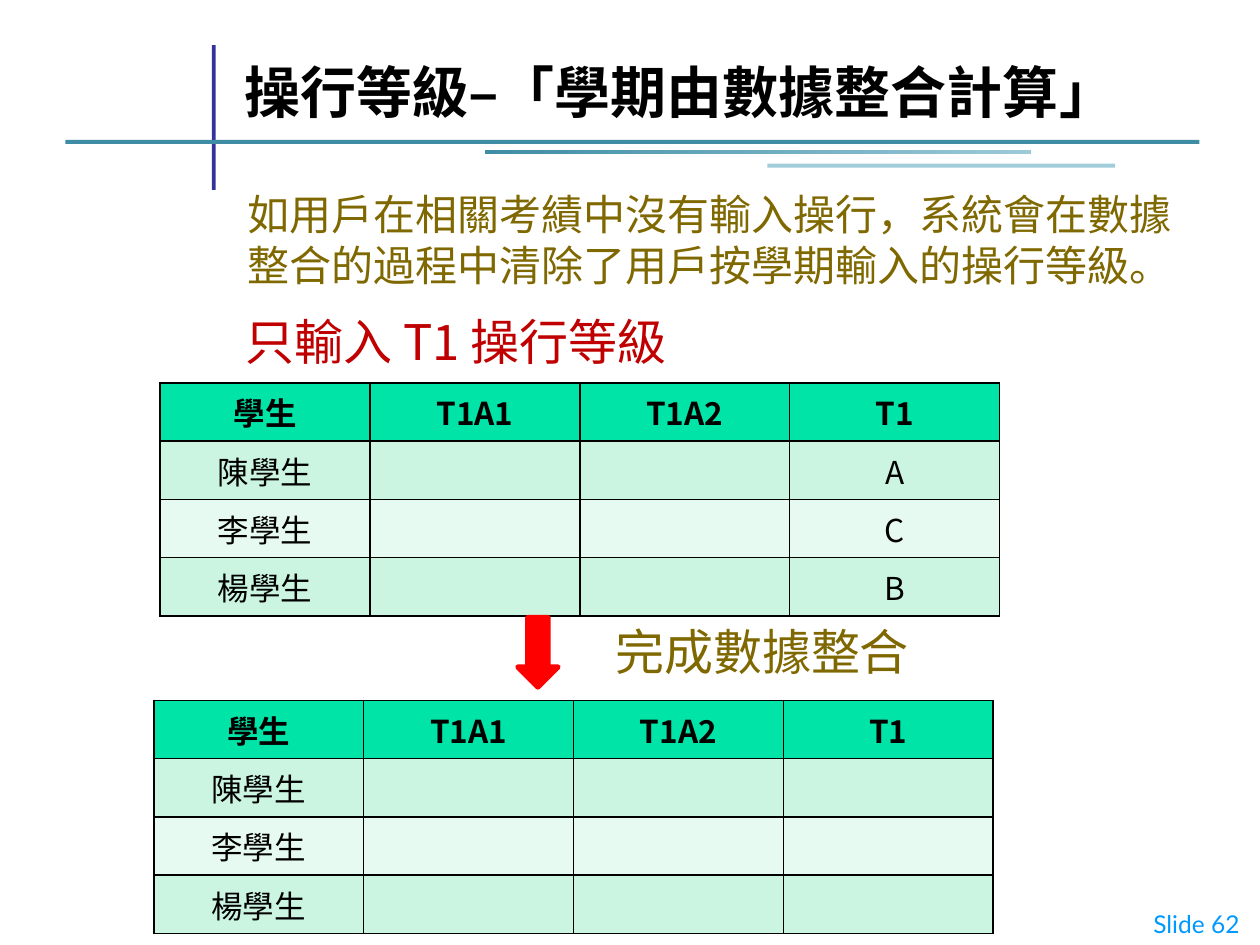
from dataclasses import dataclass

from lxml import etree
from pptx import Presentation
from pptx.dml.color import RGBColor
from pptx.enum.shapes import MSO_SHAPE
from pptx.enum.text import MSO_ANCHOR, MSO_AUTO_SIZE, PP_ALIGN
from pptx.oxml.ns import qn
from pptx.util import Cm, Pt

RECT, ARROW = MSO_SHAPE.RECTANGLE, MSO_SHAPE.DOWN_ARROW
TOP, MIDDLE, BOTTOM = MSO_ANCHOR.TOP, MSO_ANCHOR.MIDDLE, MSO_ANCHOR.BOTTOM
LEFT, CENTER, RIGHT = PP_ALIGN.LEFT, PP_ALIGN.CENTER, PP_ALIGN.RIGHT


@dataclass(frozen=True)
class Theme:
    font: str = "Noto Sans CJK SC"
    foot_font: str = "Lato"
    black: str = "000000"
    navy: str = "333399"
    teal: str = "3F8DA5"
    pale: str = "9BCAD9"
    light: str = "A1CDDB"
    olive: str = "806800"
    crimson: str = "C00000"
    red: str = "FF0000"
    blue: str = "0099FF"
    head: str = "00E4A8"
    bands: tuple[str, str] = ("CBF5E1", "E7FAF1")
    title: int = 32
    label: int = 28
    body: int = 24
    cell: int = 18
    foot: int = 14


THEME = Theme()


@dataclass(frozen=True)
class Box:
    """A frame in centimetres."""
    left: float
    top: float
    width: float
    height: float

    def frame(self) -> tuple:
        return Cm(self.left), Cm(self.top), Cm(self.width), Cm(self.height)


@dataclass(frozen=True)
class Bar:
    box: Box
    color: str
    fade: str = ""


@dataclass(frozen=True)
class Note:
    box: Box
    text: str
    size: int
    color: str
    anchor: MSO_ANCHOR = BOTTOM
    align: PP_ALIGN = CENTER
    font: str = THEME.font


@dataclass(frozen=True)
class Grid:
    left: float
    top: float
    grades: tuple[str, ...]


TITLE = Box(4.67, 1.14, 19.89, 1.5)
PUSH = Box(10.44, 12.45, 0.81, 1.4)
HEADS = ("學生", "T1A1", "T1A2", "T1")
NAMES = ("陳學生", "李學生", "楊學生")
COL, ROW = 4.23, 1.03

BARS = (
    Bar(Box(4.27, 0.91, 0.08, 2.92), THEME.navy),
    Bar(Box(1.32, 2.82, 22.86, 0.08), THEME.teal),
    Bar(Box(9.78, 3.02, 11, 0.08), THEME.teal, THEME.pale),
    Bar(Box(15.47, 3.3, 7.01, 0.08), THEME.light),
)
NOTES = (
    Note(Box(4.67, 3.68, 19.25, 2.31),
         "如用戶在相關考績中沒有輸入操行，系統會在數據整合的過程中清除了用戶按學期輸入的操行等級。",
         THEME.body, THEME.olive, TOP),
    Note(Box(4.09, 6.07, 10.21, 1.52), "只輸入 T1 操行等級", THEME.label, THEME.crimson),
    Note(Box(11.86, 12.32, 7.01, 1.52), "完成數據整合", THEME.label, THEME.olive),
    Note(Box(20.2, 18.21, 5.04, 0.84), "Slide 62", THEME.foot, THEME.blue,
         MIDDLE, RIGHT, THEME.foot_font),
)
GRIDS = (Grid(3.23, 7.72, ("A", "C", "B")), Grid(3.1, 14.12, ("", "", "")))


def rgb(color: str) -> RGBColor:
    return RGBColor.from_string(color)


def style(para, size: int, color: str, align=CENTER, bold=False, font=THEME.font) -> None:
    para.alignment = align
    para.font.size, para.font.bold, para.font.name = Pt(size), bold, font
    para.font.color.rgb = rgb(color)
    props = para._p.pPr.find(qn("a:defRPr"))
    etree.SubElement(props, qn("a:ea"), typeface=font)


def draw_bar(slide, bar: Bar) -> None:
    shape = slide.shapes.add_shape(RECT, *bar.box.frame())
    shape.shadow.inherit = False
    shape.line.fill.background()
    if bar.fade:
        shape.fill.gradient()
        shape.fill.gradient_angle = 0
        for stop, color in zip(shape.fill.gradient_stops, (bar.color, bar.fade)):
            stop.color.rgb = rgb(color)
    else:
        shape.fill.solid()
        shape.fill.fore_color.rgb = rgb(bar.color)


def draw_title(slide, text: str) -> None:
    title = slide.shapes.title
    title.left, title.top, title.width, title.height = TITLE.frame()
    frame = title.text_frame
    frame.text = text
    frame.auto_size = MSO_AUTO_SIZE.NONE
    frame.vertical_anchor = BOTTOM
    style(frame.paragraphs[0], THEME.title, THEME.black, LEFT, True)


def draw_note(slide, note: Note) -> None:
    frame = slide.shapes.add_textbox(*note.box.frame()).text_frame
    frame.word_wrap = True
    frame.vertical_anchor = note.anchor
    frame.text = note.text
    style(frame.paragraphs[0], note.size, note.color, note.align, font=note.font)


def edge(cell) -> None:
    """Rule all four sides; borders must come before the fill."""
    props = cell._tc.get_or_add_tcPr()
    for spot, side in enumerate(("lnL", "lnR", "lnT", "lnB")):
        line = etree.Element(qn(f"a:{side}"), w=str(Pt(1)))
        fill = etree.SubElement(line, qn("a:solidFill"))
        etree.SubElement(fill, qn("a:srgbClr"), val=THEME.black)
        props.insert(spot, line)


def draw_grid(slide, grid: Grid) -> None:
    rows = [HEADS] + [(name, "", "", grade) for name, grade in zip(NAMES, grid.grades)]
    box = Box(grid.left, grid.top, COL * len(HEADS), ROW * len(rows))
    table = slide.shapes.add_table(len(rows), len(HEADS), *box.frame()).table
    for r, row in enumerate(rows):
        fill = THEME.bands[(r - 1) % 2] if r else THEME.head
        for c, text in enumerate(row):
            cell = table.cell(r, c)
            cell.text = text
            cell.fill.solid()
            cell.fill.fore_color.rgb = rgb(fill)
            edge(cell)
            style(cell.text_frame.paragraphs[0], THEME.cell, THEME.black, bold=r == 0)


def draw_arrow(slide) -> None:
    arrow = slide.shapes.add_shape(ARROW, *PUSH.frame())
    arrow.shadow.inherit = False
    arrow.fill.solid()
    arrow.fill.fore_color.rgb = arrow.line.color.rgb = rgb(THEME.red)
    arrow.line.width = Pt(3)


def main() -> None:
    deck = Presentation()
    deck.slide_width, deck.slide_height = Cm(25.4), Cm(19.05)
    slide = deck.slides.add_slide(deck.slide_layouts[5])
    for bar in BARS:
        draw_bar(slide, bar)
    draw_title(slide, "操行等級–「學期由數據整合計算」")
    for grid in GRIDS:
        draw_grid(slide, grid)
    draw_arrow(slide)
    for note in NOTES:
        draw_note(slide, note)
    deck.save("out.pptx")


if __name__ == "__main__":
    main()
